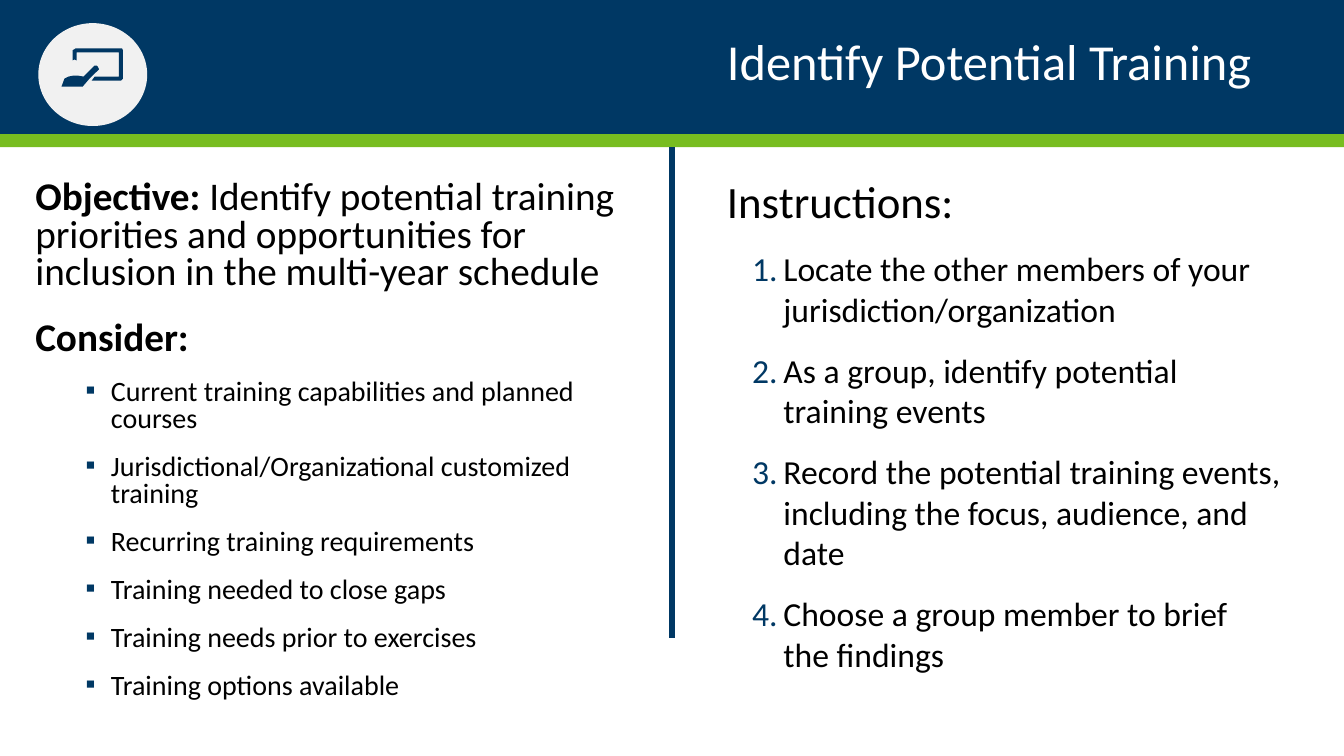
"""Build the slide that introduces the training identification activity."""
from dataclasses import dataclass

from lxml import etree
from pptx import Presentation
from pptx.dml.color import RGBColor
from pptx.enum.shapes import MSO_CONNECTOR, MSO_SHAPE
from pptx.enum.text import MSO_ANCHOR, MSO_AUTO_SIZE, PP_ALIGN
from pptx.oxml.ns import qn
from pptx.util import Inches, Pt

RECTANGLE, OVAL = MSO_SHAPE.RECTANGLE, MSO_SHAPE.OVAL
STRAIGHT = MSO_CONNECTOR.STRAIGHT
TOP, NO_AUTOFIT, LEFT = MSO_ANCHOR.TOP, MSO_AUTO_SIZE.NONE, PP_ALIGN.LEFT
TWO_CONTENT_LAYOUT = 3
BOTTOM_SITE = 2
HUNDREDTH_INCH = 9144


@dataclass(frozen=True)
class Theme:
    """Colours, font and type sizes of the slide."""
    navy: str = "003864"
    icon: str = "003763"
    green: str = "78BD20"
    pale: str = "F1F1F1"
    white: str = "FFFFFF"
    black: str = "000000"
    font: str = "Calibri"
    title: float = 36
    heading: float = 32
    objective: float = 28
    step: float = 24
    topic: float = 20


@dataclass(frozen=True)
class Box:
    """Place of an element in inches."""
    left: float
    top: float
    width: float
    height: float


@dataclass(frozen=True)
class Line:
    """One paragraph with its type size, spacing and list marker."""
    text: str
    size: float
    before: float = 0
    lead: str = ""
    margin: float = 0.01
    hang: float = 0
    right: float = 0
    spacing: float | Pt = 1.0
    bullet: str = ""
    number: int = 0
    color: str = "000000"


THEME = Theme()
SLIDE_WIDTH, SLIDE_HEIGHT = 13.33, 7.5
HEADER = Box(0, 0, SLIDE_WIDTH, 1.33)
STRIPE = Box(0, 1.33, SLIDE_WIDTH, 0.13)
BADGE = Box(0.38, 0.23, 1.08, 1.02)
TITLE = Box(7.2, 0.29, 5.23, 0.63)
INSTRUCTIONS = Box(7.2, 1.46, 5.58, 5.28)
OBJECTIVE = Box(0.34, 1.68, 5.79, 5.28)
DIVIDER_BOTTOM = 6.33

BOARD = [(120, 48), (75, 48), (72, 50), (72, 60), (74, 59), (76, 60), (76, 52),
         (118, 52), (118, 76), (94, 76), (91, 80), (120, 80), (122, 78),
         (122, 50), (121, 48)]
HAND = [(96, 65), (94, 65), (93, 66), (83, 76), (77, 75), (73, 75), (68, 76),
        (64, 78), (61, 86), (82, 86), (88, 79), (97, 70), (98, 69), (98, 68),
        (97, 66)]


def step(number: int, text: str, right: float = 0) -> Line:
    """Describe a numbered instruction."""
    return Line(text, THEME.step, 15, margin=0.57, hang=-0.31, right=right,
                number=number)


def topic(text: str, before: float = 10.2, spacing: float | Pt = 1.0) -> Line:
    """Describe a bulleted topic to consider."""
    return Line(text, THEME.topic, before, margin=0.76, hang=-0.25,
                spacing=spacing, bullet="▪")


TITLE_LINES = [Line("Identify Potential Training", THEME.title, 1, color=THEME.white)]
INSTRUCTION_LINES = [
    Line("Instructions:", THEME.heading, 18.7),
    step(1, "Locate the other members of your"),
    Line("jurisdiction/organization", THEME.step, margin=0.57),
    step(2, "As a group, identify potential training events", 0.4),
    step(3, "Record the potential training events, including the focus, audience, and date"),
    step(4, "Choose a group member to brief the findings", 0.4),
]
OBJECTIVE_LINES = [
    Line("Identify potential training priorities and opportunities for "
         "inclusion in the multi-year schedule",
         THEME.objective, 7.7, lead="Objective: ", spacing=0.8),
    Line("", THEME.objective, 13.3, lead="Consider:"),
    topic("Current training capabilities and planned courses", 15.2, Pt(19.2)),
    topic("Jurisdictional/Organizational customized training", 15.2, 0.8),
    topic("Recurring training requirements"),
    topic("Training needed to close gaps"),
    topic("Training needs prior to exercises"),
    topic("Training options available"),
]


def inches(box: Box) -> tuple:
    """Convert a box to lengths."""
    return Inches(box.left), Inches(box.top), Inches(box.width), Inches(box.height)


def paint(shape, color: str) -> None:
    """Give a shape a plain fill without line or shadow."""
    shape.shadow.inherit = False
    shape.fill.solid()
    shape.fill.fore_color.rgb = RGBColor.from_string(color)
    shape.line.fill.background()


def add_block(slide, kind, box: Box, color: str):
    """Add a plain preset shape."""
    block = slide.shapes.add_shape(kind, *inches(box))
    paint(block, color)
    return block


def add_outline(slide, points: list[tuple[int, int]], color: str) -> None:
    """Add a filled outline given in hundredths of an inch."""
    builder = slide.shapes.build_freeform(*points[0], scale=HUNDREDTH_INCH)
    builder.add_line_segments(points[1:], close=True)
    paint(builder.convert_to_shape(), color)


def add_divider(slide, stripe) -> None:
    """Draw the line between the columns, hung from the stripe."""
    middle = Inches(SLIDE_WIDTH / 2)
    divider = slide.shapes.add_connector(
        STRAIGHT, middle, Inches(STRIPE.top + STRIPE.height), middle, Inches(DIVIDER_BOTTOM))
    divider.begin_connect(stripe, BOTTOM_SITE)
    divider.line.color.rgb = RGBColor.from_string(THEME.navy)
    divider.line.width = Pt(3.75)
    etree.SubElement(divider._element.spPr, qn("a:effectLst"))


def set_marker(paragraph, line: Line) -> None:
    """Set indents and the bullet or number of a paragraph."""
    properties = paragraph._p.get_or_add_pPr()
    properties.set("marL", str(Inches(line.margin)))
    properties.set("marR", str(Inches(line.right)))
    properties.set("indent", str(Inches(line.hang)))
    if not line.bullet and not line.number:
        etree.SubElement(properties, qn("a:buNone"))
        return
    color = etree.SubElement(properties, qn("a:buClr"))
    etree.SubElement(color, qn("a:srgbClr"), val=THEME.navy)
    etree.SubElement(properties, qn("a:buFont"), typeface=THEME.font)
    if line.bullet:
        etree.SubElement(properties, qn("a:buChar"), char=line.bullet)
    else:
        etree.SubElement(properties, qn("a:buAutoNum"), type="arabicPeriod",
                         startAt=str(min(line.number, 2)))


def write_lines(placeholder, box: Box, inset: float, lines: list[Line]) -> None:
    """Place a placeholder and fill it with formatted paragraphs."""
    placeholder.left, placeholder.top, placeholder.width, placeholder.height = inches(box)
    frame = placeholder.text_frame
    frame.word_wrap = True
    frame.auto_size = NO_AUTOFIT
    frame.vertical_anchor = TOP
    frame.margin_left = frame.margin_right = frame.margin_bottom = 0
    frame.margin_top = Inches(inset)
    for index, line in enumerate(lines):
        paragraph = frame.add_paragraph() if index else frame.paragraphs[0]
        paragraph.text = line.lead or line.text
        if line.lead and line.text:
            paragraph.add_run().text = line.text
        paragraph.alignment = LEFT
        paragraph.line_spacing = line.spacing
        paragraph.space_before = Pt(line.before)
        paragraph.space_after = Pt(0)
        set_marker(paragraph, line)
        for position, run in enumerate(paragraph.runs):
            run.font.name = THEME.font
            run.font.size = Pt(line.size)
            run.font.bold = bool(line.lead) and position == 0
            run.font.color.rgb = RGBColor.from_string(line.color)


def main() -> None:
    """Build and save the slide."""
    presentation = Presentation()
    presentation.slide_width = Inches(SLIDE_WIDTH)
    presentation.slide_height = Inches(SLIDE_HEIGHT)
    slide = presentation.slides.add_slide(presentation.slide_layouts[TWO_CONTENT_LAYOUT])
    title, instructions, objective = slide.placeholders
    header = add_block(slide, RECTANGLE, HEADER, THEME.navy)
    stripe = add_block(slide, RECTANGLE, STRIPE, THEME.green)
    for backdrop in (header, stripe):
        title._element.addprevious(backdrop._element)
    write_lines(title, TITLE, 0.01, TITLE_LINES)
    write_lines(instructions, INSTRUCTIONS, 0.26, INSTRUCTION_LINES)
    write_lines(objective, OBJECTIVE, 0.11, OBJECTIVE_LINES)
    add_divider(slide, stripe)
    add_block(slide, OVAL, BADGE, THEME.pale)
    for outline in (BOARD, HAND):
        add_outline(slide, outline, THEME.icon)
    presentation.save("out.pptx")


if __name__ == "__main__":
    main()
